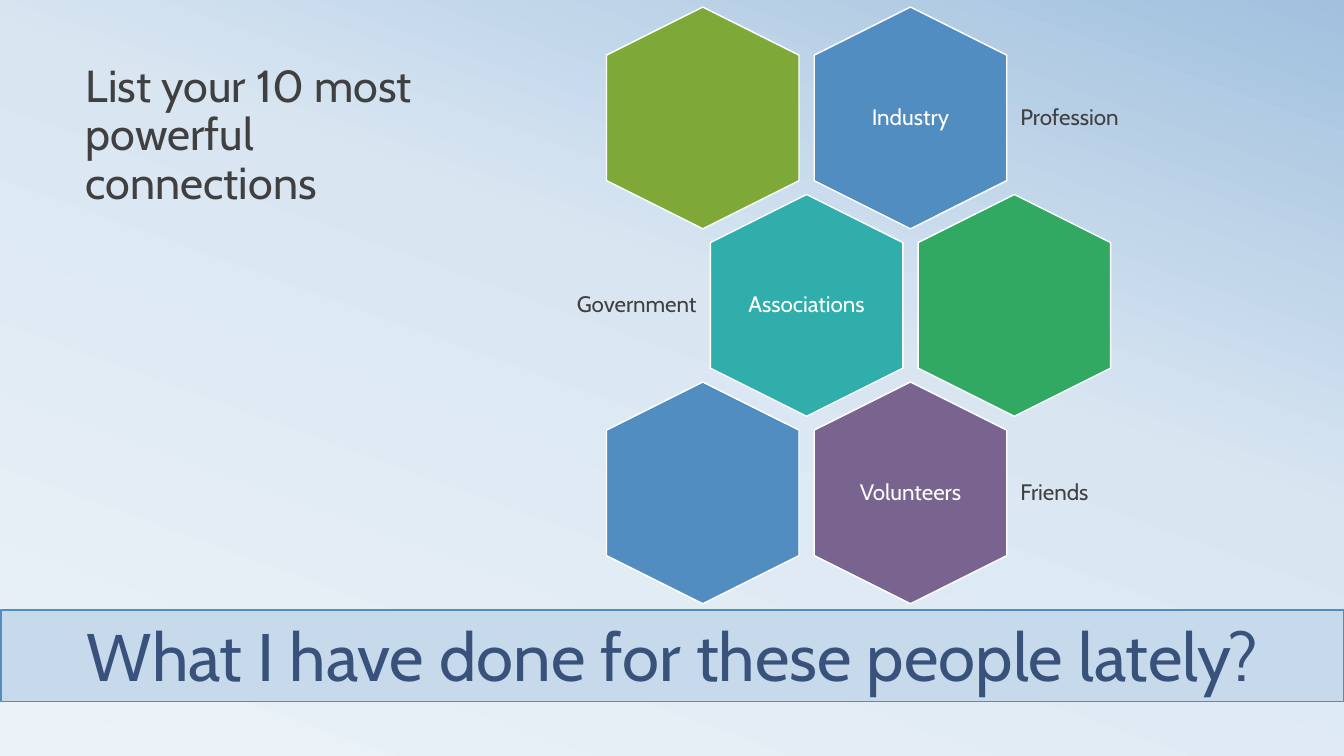
from copy import deepcopy
from dataclasses import dataclass

from pptx import Presentation
from pptx.dml.color import RGBColor
from pptx.enum.shapes import MSO_SHAPE
from pptx.enum.text import MSO_ANCHOR, MSO_AUTO_SIZE, PP_ALIGN
from pptx.oxml.ns import qn
from pptx.util import Inches, Pt

LEFT, CENTER, RIGHT = PP_ALIGN.LEFT, PP_ALIGN.CENTER, PP_ALIGN.RIGHT
TOP, MIDDLE = MSO_ANCHOR.TOP, MSO_ANCHOR.MIDDLE
HEXAGON, RECTANGLE = MSO_SHAPE.HEXAGON, MSO_SHAPE.RECTANGLE
NO_FIT = MSO_AUTO_SIZE.NONE


@dataclass(frozen=True)
class Theme:
    font: str = "Cabin"
    heading: int = 32
    question: int = 48
    label: int = 16
    dark: str = "404040"
    white: str = "FFFFFF"
    navy: str = "39527B"
    band: str = "C7DAEB"
    blue: str = "528DC2"
    lime: str = "7EA939"
    teal: str = "30AEAB"
    green: str = "31A962"
    purple: str = "78648E"
    backdrop: tuple = ((0, "ECF3F8"), (0.58, "D9E6F2"), (1, "A1C1DE"))
    backdrop_angle: int = 70


class ConnectionsSlide:
    WIDTH, HEIGHT = 13.33, 7.5
    LEFT_COL, TOP_ROW = 6.97, 1.17
    COL, ROW = 1.03, 1.86
    HEX_LENGTH, HEX_BREADTH = 2.2, 1.91
    INSET = 0.07

    def __init__(self, prs, theme):
        self.t = theme
        self.s = prs.slides.add_slide(prs.slide_layouts[2])

    def center(self, col, row):
        return self.LEFT_COL + col * self.COL, self.TOP_ROW + row * self.ROW

    def set_text(self, shape, text, size, color, align=LEFT, anchor=TOP, spacing=1.0):
        tf = shape.text_frame
        tf.word_wrap = True
        tf.auto_size = NO_FIT
        tf.vertical_anchor = anchor
        p = tf.paragraphs[0]
        p.text = text
        p.alignment = align
        p.line_spacing = spacing
        p.space_before = Pt(0)
        p.font.name = self.t.font
        p.font.size = Pt(size)
        p.font.color.rgb = RGBColor.from_string(color)
        return tf

    def paint(self, shape, fill, line):
        shape.shadow.inherit = False
        shape.fill.solid()
        shape.fill.fore_color.rgb = RGBColor.from_string(fill)
        shape.line.color.rgb = RGBColor.from_string(line)
        shape.line.width = Pt(1)

    def background(self):
        fill = self.s.background.fill
        fill.gradient()
        fill.gradient_angle = self.t.backdrop_angle
        first = next(self.s.element.iter(qn("a:gs")))
        first.addnext(deepcopy(first))
        for stop, (position, color) in zip(fill.gradient_stops, self.t.backdrop):
            stop.position = position
            stop.color.rgb = RGBColor.from_string(color)

    def heading(self, text):
        title, body = self.s.placeholders
        title.element.getparent().remove(title.element)
        body.left, body.top = Inches(0.75), Inches(0.58)
        body.width, body.height = Inches(4.17), Inches(4.67)
        self.set_text(body, text, self.t.heading, self.t.dark, spacing=0.9)

    def question_band(self, text):
        left = 0.01
        sp = self.s.shapes.add_shape(
            RECTANGLE, Inches(left), Inches(6.05),
            Inches(self.WIDTH - left), Inches(0.91))
        self.paint(sp, self.t.band, self.t.blue)
        self.set_text(sp, text, self.t.question, self.t.navy, CENTER)

    def label(self, text, left, middle, width, height, color, align):
        box = self.s.shapes.add_textbox(
            Inches(left), Inches(middle - height / 2), Inches(width), Inches(height))
        tf = self.set_text(box, text, self.t.label, color, align, MIDDLE, 0.9)
        tf.margin_left = tf.margin_right = Inches(self.INSET)
        tf.margin_top = tf.margin_bottom = Inches(self.INSET)

    def hexagon(self, col, row, fill, text=""):
        x, y = self.center(col, row)
        sp = self.s.shapes.add_shape(
            HEXAGON, Inches(x - self.HEX_LENGTH / 2), Inches(y - self.HEX_BREADTH / 2),
            Inches(self.HEX_LENGTH), Inches(self.HEX_BREADTH))
        sp.rotation = 90
        sp.adjustments[0] = 0.25
        self.paint(sp, fill, self.t.white)
        if text:
            width = 1.31
            self.label(text, x - width / 2, y, width, 1.51, self.t.white, CENTER)

    def side_label(self, col, row, text, align):
        x, y = self.center(col, row)
        width, gap = 2.4, 1.02
        left = x + gap if align == LEFT else x - gap - width
        self.label(text, left, y, width, 1.32, self.t.dark, align)


def main():
    prs = Presentation()
    prs.slide_width = Inches(ConnectionsSlide.WIDTH)
    prs.slide_height = Inches(ConnectionsSlide.HEIGHT)
    t = Theme()
    slide = ConnectionsSlide(prs, t)
    slide.background()
    slide.heading("List your 10 most powerful connections")
    slide.question_band("What I have done for these people lately?")
    for col, row, fill, text in (
        (2, 0, t.blue, "Industry"),
        (0, 0, t.lime, ""),
        (1, 1, t.teal, "Associations"),
        (3, 1, t.green, ""),
        (2, 2, t.purple, "Volunteers"),
        (0, 2, t.blue, ""),
    ):
        slide.hexagon(col, row, fill, text)
    for col, row, text, align in (
        (2, 0, "Profession", LEFT),
        (1, 1, "Government", RIGHT),
        (2, 2, "Friends", LEFT),
    ):
        slide.side_label(col, row, text, align)
    prs.save("out.pptx")


if __name__ == "__main__":
    main()
